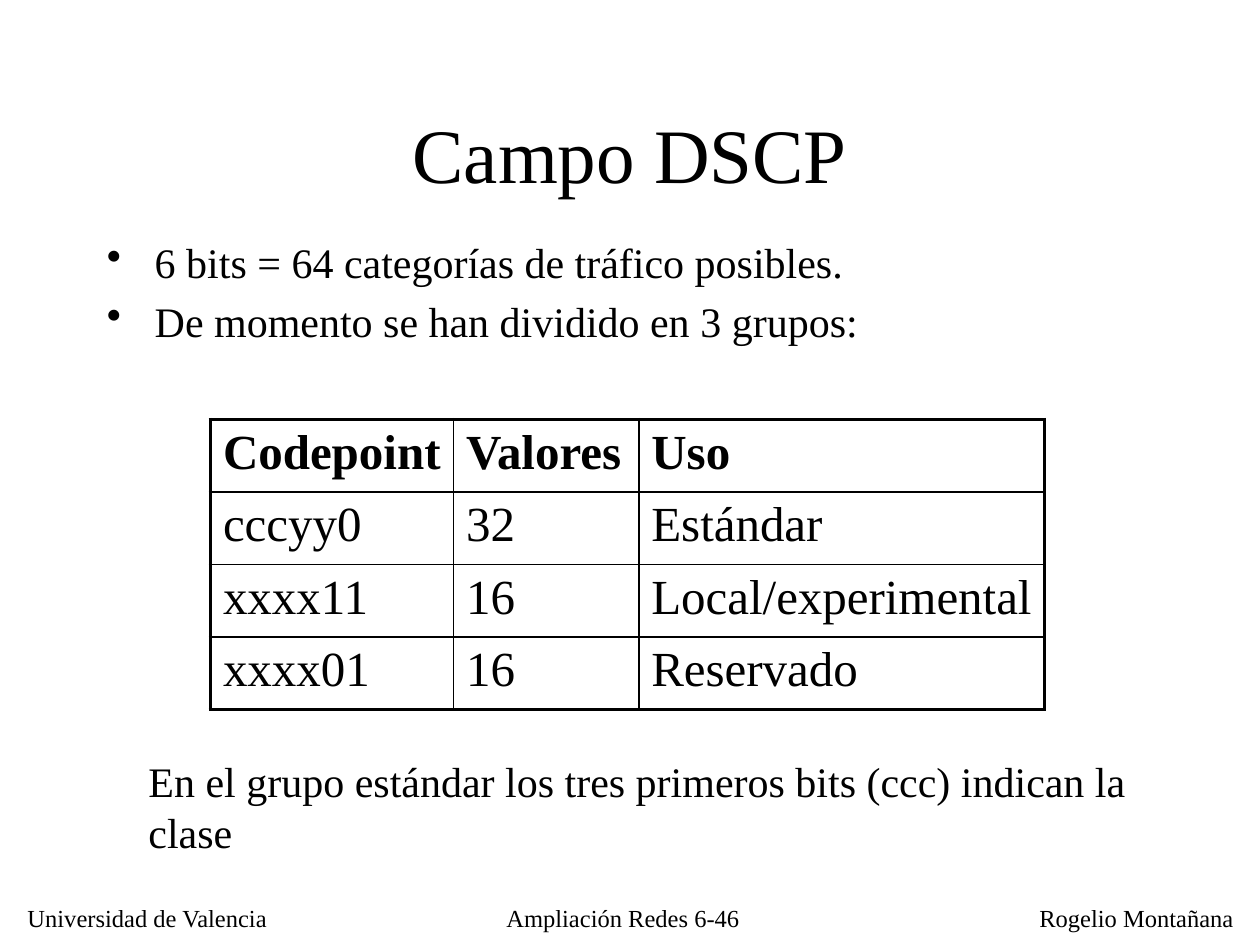
from dataclasses import dataclass

from lxml import etree
from pptx import Presentation
from pptx.dml.color import RGBColor
from pptx.enum.text import MSO_ANCHOR, PP_ALIGN
from pptx.oxml.ns import qn
from pptx.util import Inches, Pt

LEFT, CENTER = PP_ALIGN.LEFT, PP_ALIGN.CENTER
TOP, MIDDLE = MSO_ANCHOR.TOP, MSO_ANCHOR.MIDDLE
FONT = "Times New Roman"
COLORS = {"ink": "000000", "paper": "FFFFFF"}
OUTER_LINE, INNER_LINE = 2.25, 1
TITLE_ONLY = 5


@dataclass
class TextBlock:
    box: tuple[float, float, float, float]
    lines: list[str]
    size: float
    align: PP_ALIGN = LEFT
    anchor: MSO_ANCHOR = TOP
    wrap: bool = True
    space_before: int = 0  # percent of the line
    bullet_indent: float = 0


BLOCKS = [
    TextBlock((0.12, 7.12, 2.13, 0.33), ["Universidad de Valencia"], 14, wrap=False),
    TextBlock((8.15, 7.12, 1.74, 0.33), ["Rogelio Montañana"], 14, wrap=False),
    TextBlock((3.43, 7.12, 3.03, 0.38), ["Ampliación Redes 6-46"], 14, CENTER),
    TextBlock((0.75, 1.83, 8.5, 1.25),
              ["6 bits = 64 categorías de tráfico posibles.",
               "De momento se han dividido en 3 grupos:"],
              24, space_before=20, bullet_indent=0.38),
    TextBlock((1.08, 5.95, 8, 0.9),
              ["En el grupo estándar los tres primeros bits (ccc) indican la clase"],
              24, space_before=50),
]
TITLE = TextBlock((0.75, 0.67, 8.5, 1.08), ["Campo DSCP"], 44, CENTER, MIDDLE)

CODEPOINTS = [
    ("Codepoint", "Valores", "Uso"),
    ("cccyy0", "32", "Estándar"),
    ("xxxx11", "16", "Local/experimental"),
    ("xxxx01", "16", "Reservado"),
]
COLUMN_WIDTHS = (1.93, 1.47, 3.22)
ROW_HEIGHT = 0.575


def add_text(paragraph, text: str, size: float, bold: bool = False) -> None:
    run = paragraph.add_run()
    run.text = text
    run.font.name = FONT
    run.font.size = Pt(size)
    run.font.bold = bold
    run.font.color.rgb = RGBColor.from_string(COLORS["ink"])


def set_space_before(paragraph, percent: int) -> None:
    properties = paragraph._p.get_or_add_pPr()
    spacing = etree.SubElement(properties, qn("a:spcBef"))
    etree.SubElement(spacing, qn("a:spcPct"), val=str(percent * 1000))


def set_bullet(paragraph, indent: float) -> None:
    properties = paragraph._p.get_or_add_pPr()
    properties.set("marL", str(Inches(indent)))
    properties.set("indent", str(-Inches(indent)))
    etree.SubElement(properties, qn("a:buChar"), char="•")


def fill_block(shape, block: TextBlock) -> None:
    shape.left, shape.top, shape.width, shape.height = map(Inches, block.box)
    frame = shape.text_frame
    frame.word_wrap = block.wrap
    frame.vertical_anchor = block.anchor
    for index, line in enumerate(block.lines):
        paragraph = frame.add_paragraph() if index else frame.paragraphs[0]
        paragraph.alignment = block.align
        if block.space_before:
            set_space_before(paragraph, block.space_before)
        if block.bullet_indent:
            set_bullet(paragraph, block.bullet_indent)
        add_text(paragraph, line, block.size)


def set_borders(cell, outer_sides: dict[str, bool]) -> None:
    properties = cell._tc.get_or_add_tcPr()
    for position, (side, is_outer) in enumerate(outer_sides.items()):
        width = Pt(OUTER_LINE if is_outer else INNER_LINE)
        line = etree.Element(qn(f"a:ln{side}"), w=str(width))
        fill = etree.SubElement(line, qn("a:solidFill"))
        etree.SubElement(fill, qn("a:srgbClr"), val=COLORS["ink"])
        properties.insert(position, line)


def add_codepoint_table(slide, left: float, top: float) -> None:
    row_count, column_count = len(CODEPOINTS), len(COLUMN_WIDTHS)
    table = slide.shapes.add_table(
        row_count, column_count, Inches(left), Inches(top),
        Inches(sum(COLUMN_WIDTHS)), Inches(ROW_HEIGHT * row_count)).table
    table.first_row = table.horz_banding = False
    for column, width in zip(table.columns, COLUMN_WIDTHS):
        column.width = Inches(width)
    for r, values in enumerate(CODEPOINTS):
        table.rows[r].height = Inches(ROW_HEIGHT)
        for c, value in enumerate(values):
            cell = table.cell(r, c)
            cell.fill.background()
            paragraph = cell.text_frame.paragraphs[0]
            set_space_before(paragraph, 20)
            add_text(paragraph, value, 28, bold=r == 0)
            set_borders(cell, {"L": c == 0, "R": c == column_count - 1,
                               "T": r == 0, "B": r == row_count - 1})


def main() -> None:
    presentation = Presentation()
    presentation.slide_width, presentation.slide_height = Inches(10), Inches(7.5)
    slide = presentation.slides.add_slide(presentation.slide_layouts[TITLE_ONLY])
    background = slide.background.fill
    background.solid()
    background.fore_color.rgb = RGBColor.from_string(COLORS["paper"])

    # Title, footer and body text
    fill_block(slide.shapes.title, TITLE)
    for block in BLOCKS:
        fill_block(slide.shapes.add_textbox(0, 0, 0, 0), block)

    # Codepoint groups
    add_codepoint_table(slide, 1.67, 3.33)
    presentation.save("out.pptx")


if __name__ == "__main__":
    main()
